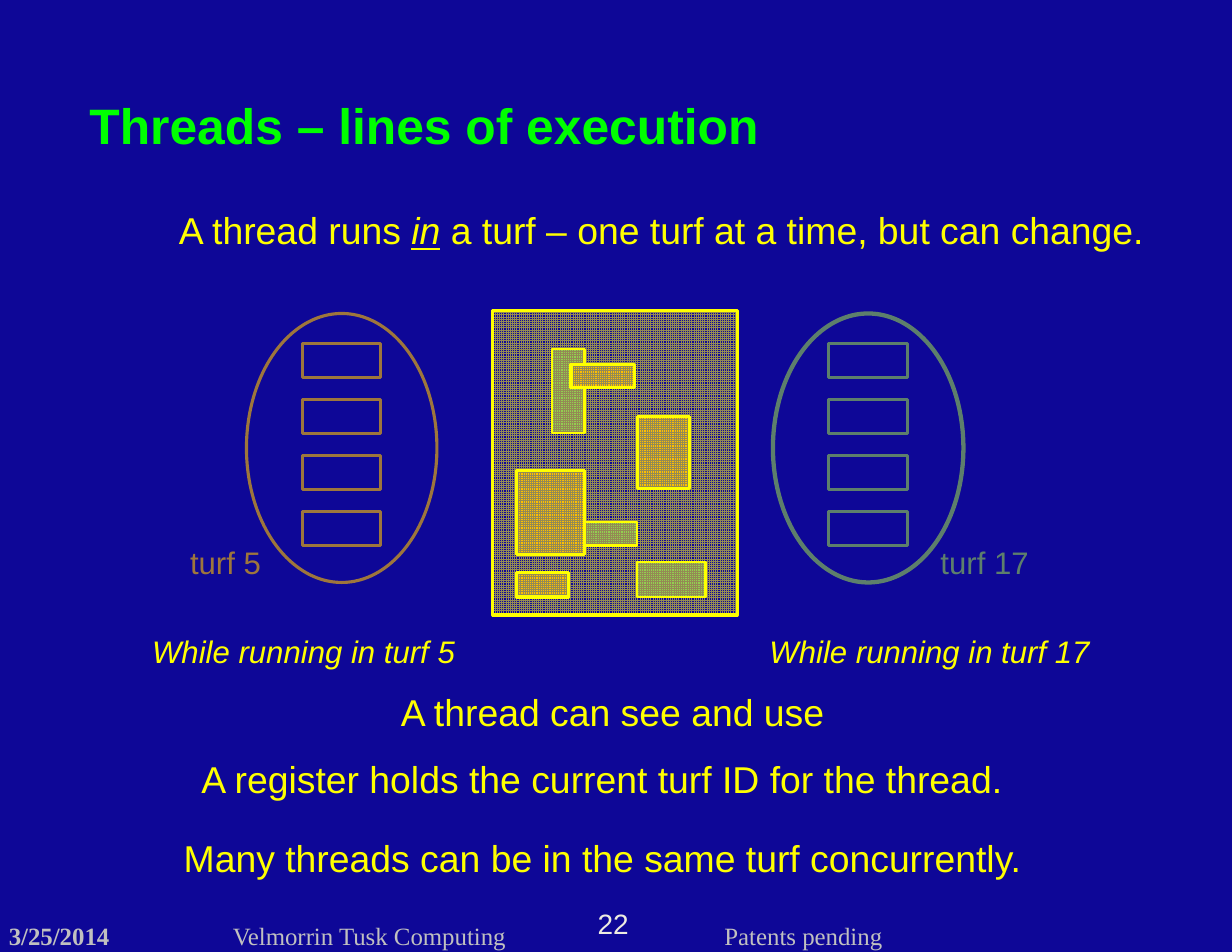
from dataclasses import dataclass, field
from lxml.etree import SubElement
from pptx import Presentation
from pptx.dml.color import RGBColor
from pptx.enum.dml import MSO_PATTERN
from pptx.enum.shapes import MSO_SHAPE
from pptx.enum.text import MSO_ANCHOR, PP_ALIGN
from pptx.oxml.ns import qn
from pptx.util import Cm, Pt

COLORS = {
    "background": "0E0797",
    "title": "00FF00",
    "body": "FFFF00",
    "grid": "948A54",
    "green": "92D050",
    "gold": "FFC000",
    "footer": "C0C0C0",
    "page": "EEECE1",
}
FOOTER = {"name": "Times New Roman", "size": Pt(16)}
BODY = {"name": "Arial", "size": Pt(24)}
LABEL = {"name": "Arial", "size": Pt(20)}
ITALIC = {**LABEL, "italic": True}


@dataclass
class Box:
    left: float
    top: float
    width: float
    height: float

    def lengths(self) -> list:
        return [Cm(value) for value in (self.left, self.top, self.width, self.height)]


@dataclass
class Caption:
    box: Box
    runs: list
    color: str = "body"
    style: dict = field(default_factory=lambda: BODY)
    align: PP_ALIGN = PP_ALIGN.LEFT
    wrap: bool = False
    insets: tuple = (0.25, 0.13, 0.25, 0.13)


@dataclass
class Turf:
    left: float
    color: str
    outline: float
    label: Caption


def rgb(color: str) -> RGBColor:
    return RGBColor.from_string(COLORS[color])


def draw_caption(shapes, caption: Caption) -> None:
    frame = shapes.add_textbox(*caption.box.lengths()).text_frame
    left, top, right, bottom = map(Cm, caption.insets)
    frame_format = {
        "word_wrap": caption.wrap,
        "vertical_anchor": MSO_ANCHOR.TOP,
        "margin_left": left,
        "margin_top": top,
        "margin_right": right,
        "margin_bottom": bottom,
    }
    for name, value in frame_format.items():
        setattr(frame, name, value)
    paragraph = frame.paragraphs[0]
    paragraph.alignment = caption.align
    for text, emphasis in caption.runs:
        run = paragraph.add_run()
        run.text = text
        for name, value in {**caption.style, **emphasis}.items():
            setattr(run.font, name, value)
        run.font.color.rgb = rgb(caption.color)


def draw_outline(shapes, kind: MSO_SHAPE, box: Box, color: str, width: float):
    shape = shapes.add_shape(kind, *box.lengths())
    shape.shadow.inherit = False
    shape.fill.background()
    shape.line.color.rgb = rgb(color)
    shape.line.width = Pt(width)
    return shape


def draw_memory(shapes, box: Box, color: str, width: float) -> None:
    fill = draw_outline(shapes, MSO_SHAPE.RECTANGLE, box, "body", width).fill
    fill.patterned()
    fill.pattern = MSO_PATTERN.SMALL_GRID
    fill.fore_color.rgb = rgb("grid")
    fill.back_color.rgb = rgb(color)


def draw_regions(shapes, boxes: list, color: str, width: float) -> None:
    group = shapes.add_group_shape()
    for box in boxes:
        draw_memory(group.shapes, box, color, width)


def draw_turf(shapes, turf: Turf) -> None:
    for row in range(4):
        entry = Box(turf.left + 1.27, 7.8 + 1.27 * row, 1.78, 0.76)
        draw_outline(shapes, MSO_SHAPE.RECTANGLE, entry, turf.color, 2)
    draw_outline(shapes, MSO_SHAPE.OVAL, Box(turf.left, 7.11, 4.32, 6.1),
                 turf.color, turf.outline)
    draw_caption(shapes, turf.label)


def draw_veil(shapes, box: Box) -> None:
    veil = shapes.add_shape(MSO_SHAPE.RECTANGLE, *box.lengths())
    veil.shadow.inherit = False
    veil.line.fill.background()
    veil.fill.solid()
    veil.fill.fore_color.rgb = rgb("background")
    tint = veil.fill._xPr.find(qn("a:solidFill"))[0]
    SubElement(tint, qn("a:alpha"), val="40000")


NO_INSETS = (0, 0, 0, 0)
FOOTERS = [
    Caption(Box(0.2, 20.88, 2.54, 0.66), [("3/25/2014", {"bold": True})],
            "footer", FOOTER, insets=NO_INSETS),
    Caption(Box(13.51, 20.55, 0.79, 0.76), [("22", {})], "page",
            {"name": "Arial", "size": Pt(18)}, PP_ALIGN.CENTER, insets=NO_INSETS),
    Caption(Box(5.28, 20.88, 6.25, 0.66), [("Velmorrin Tusk Computing", {})],
            "footer", FOOTER, insets=NO_INSETS),
    Caption(Box(16.43, 20.88, 3.61, 0.69), [("Patents pending", {})],
            "footer", FOOTER, insets=NO_INSETS),
]
TITLE = Caption(Box(2.03, 2.08, 23.44, 1.32), [("Threads – lines of execution", {})],
                "title", {"name": "Arial", "size": Pt(32), "bold": True},
                wrap=True, insets=(0, 0.08, 0, 0))
INTRO = Caption(Box(3.81, 4.57, 22.61, 1.27), [
    ("A thread runs ", {}),
    ("in", {"italic": True, "underline": True}),
    (" a turf – one turf at a time, but can change.", {}),
])
TURF_5 = Turf(5.59, "gold", 2,
              Caption(Box(4.06, 12.19, 2.13, 1.12), [("turf 5", {})], "gold", LABEL))
TURF_17 = Turf(17.53, "green", 2.75,
               Caption(Box(21.08, 12.19, 2.51, 1.12), [("turf 17", {})], "green", LABEL))
SHARED_REGION = Box(11.71, 10.67, 1.55, 1.9)
GREEN_REGIONS = [
    SHARED_REGION,
    Box(12.52, 7.92, 0.74, 1.9),
    Box(12.9, 11.84, 1.55, 0.53),
    Box(14.45, 12.75, 1.55, 0.79),
]
GOLD_REGIONS = [
    SHARED_REGION,
    Box(12.95, 8.26, 1.45, 0.53),
    Box(14.45, 9.45, 1.19, 1.63),
    Box(11.71, 12.98, 1.19, 0.56),
]
STATES = [
    Caption(Box(3.2, 14.22, 7.44, 1.12), [("While running in turf 5", {})], style=ITALIC),
    Caption(Box(17.2, 14.22, 7.82, 1.12), [("While running in turf 17", {})], style=ITALIC),
    Caption(Box(8.84, 15.49, 10.21, 1.27), [("A thread can see and use", {})]),
]
CONCLUSIONS = [
    Caption(Box(4.32, 17.02, 18.85, 1.27),
            [("A register holds the current turf ID for the thread.", {})]),
    Caption(Box(3.81, 18.8, 19.71, 1.27),
            [("Many threads can be in the same turf concurrently.", {})],
            align=PP_ALIGN.CENTER),
]


def main() -> None:
    deck = Presentation()
    deck.slide_width, deck.slide_height = Cm(27.94), Cm(21.59)
    slide = deck.slides.add_slide(deck.slide_layouts[6])
    slide.background.fill.solid()
    slide.background.fill.fore_color.rgb = rgb("background")
    shapes = slide.shapes
    for footer in FOOTERS:
        draw_caption(shapes, footer)
    draw_memory(shapes, Box(11.18, 7.04, 5.54, 6.91), "background", 2)
    draw_caption(shapes, TITLE)
    draw_regions(shapes, GREEN_REGIONS, "green", 1.5)
    for turf in (TURF_17, TURF_5):
        draw_turf(shapes, turf)
    draw_caption(shapes, INTRO)
    draw_veil(shapes, Box(2.87, 6.91, 7.44, 6.83))
    for state in STATES:
        draw_caption(shapes, state)
    draw_regions(shapes, GOLD_REGIONS, "gold", 2)
    draw_veil(shapes, Box(17.2, 6.93, 7.44, 6.83))
    for conclusion in CONCLUSIONS:
        draw_caption(shapes, conclusion)
    deck.save("out.pptx")


if __name__ == "__main__":
    main()
